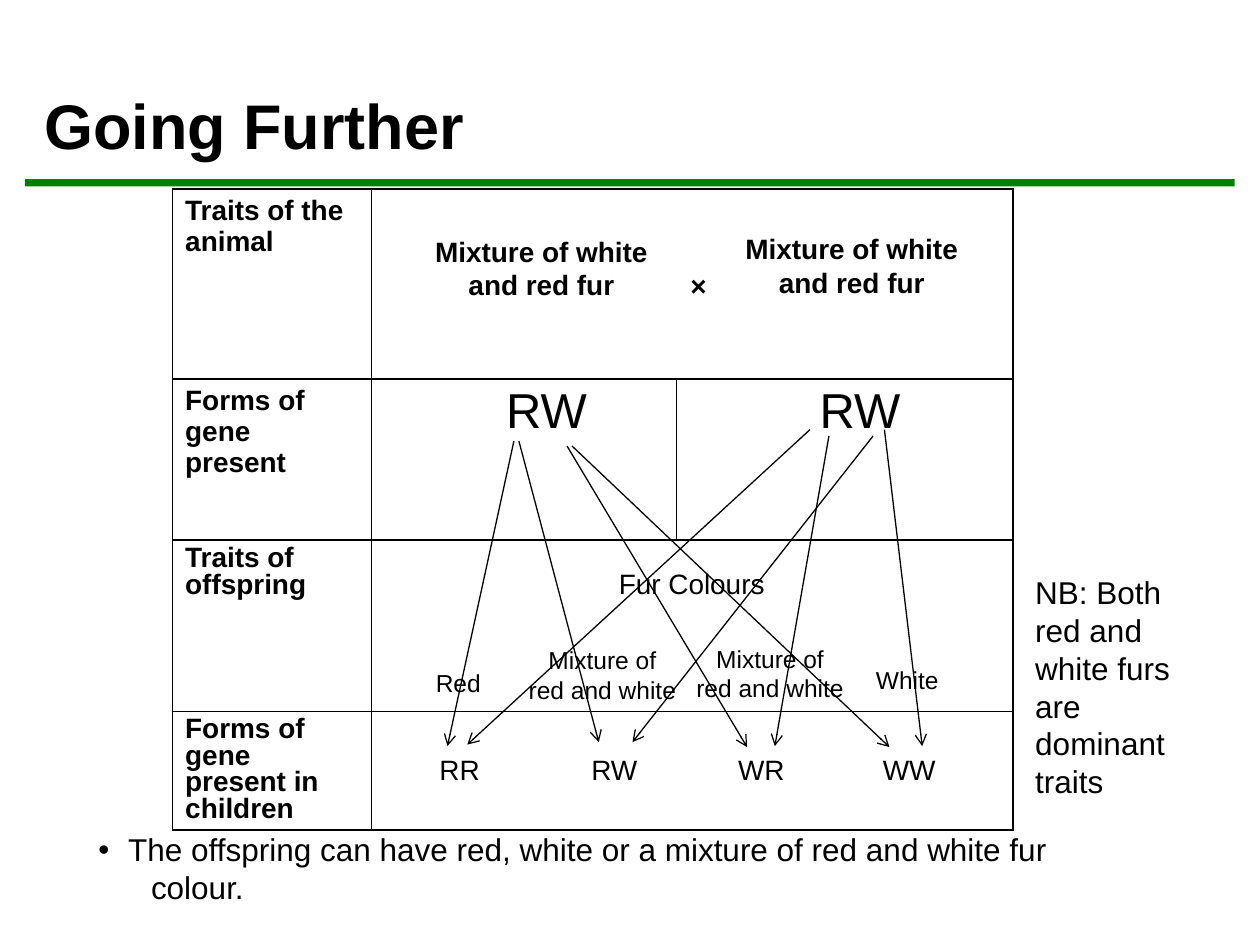
from dataclasses import dataclass
from typing import Any

from lxml import etree
from pptx import Presentation
from pptx.dml.color import RGBColor
from pptx.enum.shapes import MSO_CONNECTOR, MSO_SHAPE
from pptx.enum.text import MSO_ANCHOR, MSO_AUTO_SIZE, PP_ALIGN
from pptx.oxml.ns import qn
from pptx.util import Cm, Pt

LEFT, CENTER = PP_ALIGN.LEFT, PP_ALIGN.CENTER
TOP, BOTTOM = MSO_ANCHOR.TOP, MSO_ANCHOR.BOTTOM
NO_AUTOFIT = MSO_AUTO_SIZE.NONE
STRAIGHT, RECTANGLE = MSO_CONNECTOR.STRAIGHT, MSO_SHAPE.RECTANGLE

COLORS = {"ink": "000000", "paper": "FFFFFF", "rule": "008000"}


@dataclass
class SlideBuilder:
    slide: Any
    font: str = "Arial"

    def color(self, name):
        return RGBColor.from_string(COLORS[name])

    def format(self, paragraph, size, bold=False, align=LEFT):
        paragraph.alignment = align
        paragraph.space_before = Pt(0)
        paragraph.font.name = self.font
        paragraph.font.size = Pt(size)
        paragraph.font.bold = bold
        paragraph.font.color.rgb = self.color("ink")

    def place(self, shape, box):
        shape.left, shape.top, shape.width, shape.height = map(Cm, box)

    def title(self, text, box):
        title = self.slide.shapes.title
        self.place(title, box)
        frame = title.text_frame
        frame.text = text
        frame.auto_size = NO_AUTOFIT
        frame.vertical_anchor = BOTTOM
        self.format(frame.paragraphs[0], 36, bold=True)

    def body(self, lines, box):
        """Each line is (text, left margin in cm, bullet or None)."""
        body = self.slide.placeholders[1]
        self.place(body, box)
        frame = body.text_frame
        frame.text = "\n".join(text for text, _, _ in lines)
        frame.auto_size = NO_AUTOFIT
        for paragraph, (_, margin, bullet) in zip(frame.paragraphs, lines):
            properties = paragraph._p.get_or_add_pPr()
            properties.set("marL", str(Cm(margin)))
            properties.set("indent", str(-Cm(margin) if bullet else 0))
            if bullet:
                etree.SubElement(properties, qn("a:buChar"), char=bullet)
            else:
                etree.SubElement(properties, qn("a:buNone"))
            self.format(paragraph, 18)

    def bar(self, box):
        shape = self.slide.shapes.add_shape(RECTANGLE, *map(Cm, box))
        shape.shadow.inherit = False
        shape.fill.solid()
        shape.fill.fore_color.rgb = self.color("rule")
        shape.line.fill.background()

    def text(self, text, box, size, bold=False, align=CENTER):
        frame = self.slide.shapes.add_textbox(*map(Cm, box)).text_frame
        frame.word_wrap = True
        frame.text = text
        self.format(frame.paragraphs[0], size, bold, align)

    def cell_style(self, cell):
        properties = cell._tc.get_or_add_tcPr()
        for side in ("a:lnL", "a:lnR", "a:lnT", "a:lnB"):
            border = etree.SubElement(properties, qn(side), w=str(Pt(1)))
            fill = etree.SubElement(border, qn("a:solidFill"))
            etree.SubElement(fill, qn("a:srgbClr"), val=COLORS["ink"])
        cell.fill.solid()
        cell.fill.fore_color.rgb = self.color("paper")
        cell.vertical_anchor = TOP

    def table(self, origin, widths, rows):
        """Each row is (heading, height in cm, line spacing, merged or not)."""
        size = (sum(widths), sum(row[1] for row in rows))
        table = self.slide.shapes.add_table(
            len(rows), len(widths), *map(Cm, origin + size)).table
        table.first_row = table.horz_banding = False
        for column, width in zip(table.columns, widths):
            column.width = Cm(width)
        for index, (heading, height, spacing, merged) in enumerate(rows):
            table.rows[index].height = Cm(height)
            for cell in table.rows[index].cells:
                self.cell_style(cell)
            if merged:
                table.cell(index, 1).merge(table.cell(index, 2))
            cell = table.cell(index, 0)
            cell.text = heading
            paragraph = cell.text_frame.paragraphs[0]
            paragraph.line_spacing = spacing
            self.format(paragraph, 16, bold=True)

    def arrow(self, start, end):
        connector = self.slide.shapes.add_connector(
            STRAIGHT, *map(Cm, start + end))
        connector.line.color.rgb = self.color("ink")
        connector.line.width = Pt(0.75)
        etree.SubElement(connector.line._get_or_add_ln(),
                         qn("a:tailEnd"), type="arrow")
        etree.SubElement(connector._element.spPr, qn("a:effectLst"))


def main():
    presentation = Presentation()
    presentation.slide_width, presentation.slide_height = Cm(25.4), Cm(19.05)
    slide = presentation.slides.add_slide(presentation.slide_layouts[1])
    builder = SlideBuilder(slide)

    # Heading and rule
    builder.bar((0.51, 3.61, 24.38, 0.15))
    builder.title("Going Further", (0.64, 0.43, 24.77, 2.97))

    # Inheritance table
    builder.table((3.48, 3.81), (4.01, 6.15, 6.78), [
        ("Traits of the animal", 3.83, 1.0, True),
        ("Forms of gene present", 3.25, 1.0, False),
        ("Traits of offspring", 3.45, 0.85, True),
        ("Forms of gene present in children", 1.85, 0.85, True),
    ])

    # Parents: traits and genes
    builder.text("×", (13.56, 5.28, 1.04, 1.07), 16, bold=True)
    for left, top, width in ((8.36, 4.6, 5.11), (14.53, 4.55, 5.28)):
        builder.text("Mixture of white and red fur",
                     (left, top, width, 1.35), 16, bold=True)
    for left in (8.26, 14.58):
        builder.text("RW", (left, 7.52, 5.51, 1.45), 28)

    # Offspring: traits and genes
    builder.text("Fur Colours", (9.4, 11.3, 9.09, 0.94), 16)
    for trait, box in (
        ("Red", (7.82, 13.34, 2.84, 0.86)),
        ("Mixture of red and white", (10.39, 12.88, 3.51, 1.45)),
        ("Mixture of red and white", (13.77, 12.85, 3.51, 1.45)),
        ("White", (16.87, 13.28, 2.84, 0.86)),
    ):
        builder.text(trait, box, 14)
    for genes, left, width in (("RR", 8.53, 1.47), ("RW", 11.33, 2.11),
                               ("WR", 14.4, 1.9), ("WW", 17.48, 1.7)):
        builder.text(genes, (left, 15.04, width, 0.94), 16)

    # Arrows from each parent's genes to the children
    for start, end in (
        ((10.36, 8.89), (9.02, 15.04)),
        ((16.33, 8.66), (9.42, 15.01)),
        ((10.46, 8.89), (12.07, 14.96)),
        ((17.6, 8.79), (12.75, 14.96)),
        ((11.43, 8.99), (15.06, 15.06)),
        ((16.71, 8.79), (15.62, 15.04)),
        ((11.53, 8.99), (17.93, 15.06)),
        ((17.83, 8.66), (18.59, 15.04)),
    ):
        builder.arrow(start, end)

    # Remarks
    builder.text("NB: Both red and white furs are dominant traits",
                 (20.62, 11.43, 4.01, 4.88), 18, align=LEFT)
    builder.body([
        ("The offspring can have red, white or a mixture of red and white fur",
         0.6, "•"),
        ("colour.", 1.06, None),
    ], (1.73, 16.61, 22.02, 1.8))

    presentation.save("out.pptx")


if __name__ == "__main__":
    main()
